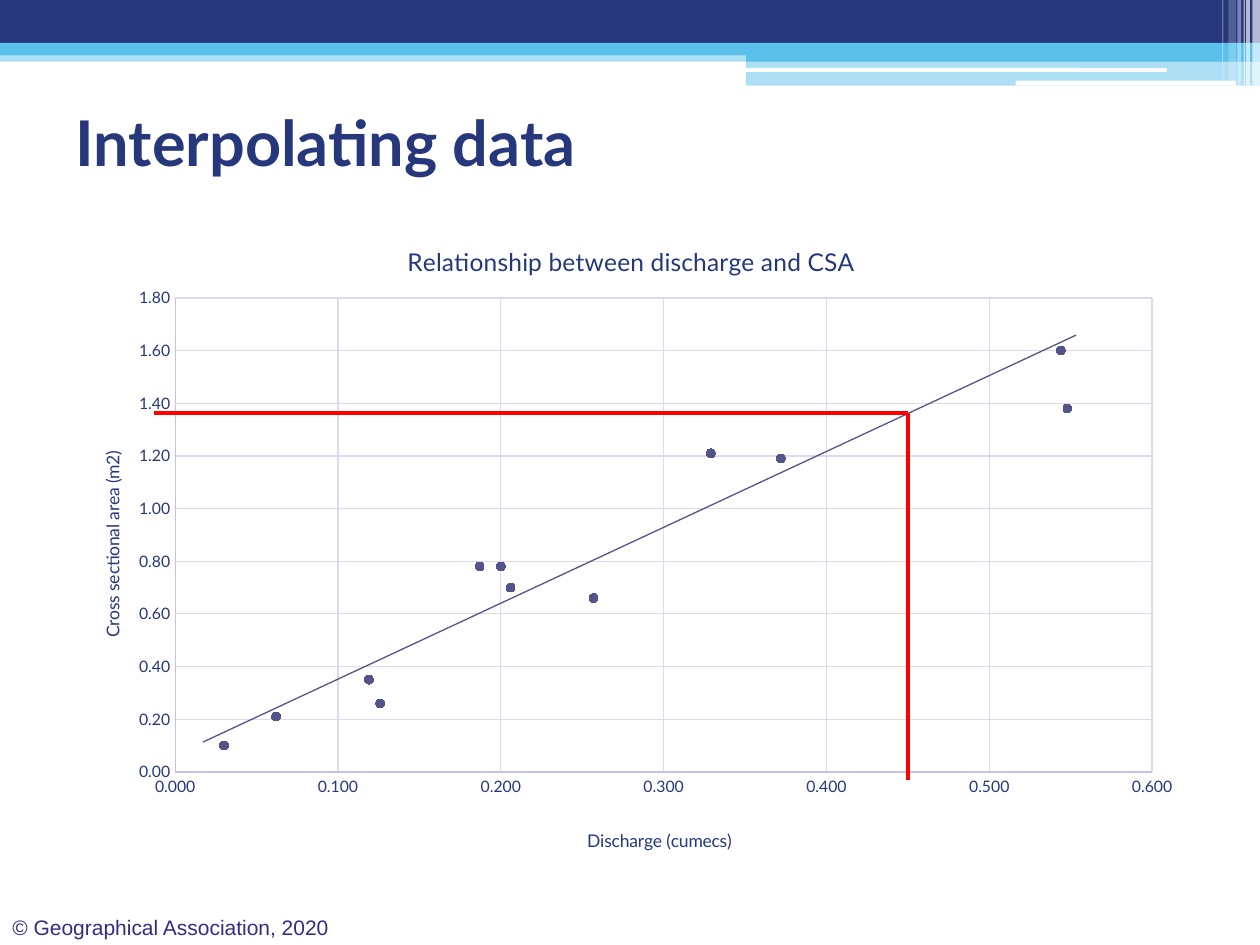
"""Builds a slide on interpolating data from a scatter chart."""
from lxml import etree
from pptx import Presentation
from pptx import util as u
from pptx.chart.data import XyChartData
from pptx.dml.color import RGBColor
from pptx.enum import chart as ch, shapes, text
from pptx.oxml import parse_xml
from pptx.oxml.ns import nsdecls, qn

NAVY, SKY, WHITE = "26377C", "5CC1EA", "FFFFFF"
PURPLE, SLATE, RED = "352B84", "53548A", "FF0000"
AXIS, GRID = "C5C0EA", "DCD9F3"

BANDS = [
    (0, 0.4, 10, 0.09, SKY, 50),
    (0, 0, 10, 0.34, NAVY, 100),
    (0, 0.34, 10, 0.1, SKY, 100),
    (5.92, 0.39, 4.08, 0.1, SKY, 100),
    (5.92, 0.48, 4.08, 0.2, SKY, 50),
]
HIGHLIGHTS = [(5.91, 0.54, 3.35, 0.03), (8.06, 0.64, 1.75, 0.04)]
STRIPES = [
    (9.94, 0.06, 0.68, 65),
    (9.89, 0.03, 0.68, 65),
    (9.87, 0.01, 0.68, 60),
    (9.82, 0.03, 0.68, 40),
    (9.75, 0.06, 0.64, 20),
    (9.7, 0.01, 0.64, 30),
]
DISCHARGE_AREA = [
    (0.030, 0.10), (0.126, 0.26), (0.187, 0.78), (0.062, 0.21),
    (0.372, 1.19), (0.206, 0.70), (0.257, 0.66), (0.119, 0.35),
    (0.200, 0.78), (0.548, 1.38), (0.544, 1.60), (0.329, 1.21),
]


def rgb(value):
    """Return the colour for a hex string."""
    return RGBColor.from_string(value)


def style_font(font, name, size, color, bold=False):
    """Set typeface, size, colour and weight."""
    font.name, font.size, font.bold = name, u.Pt(size), bold
    font.color.rgb = rgb(color)


def style_line(line, color, width):
    """Set the colour and width of a line."""
    line.color.rgb = rgb(color)
    line.width = u.Pt(width)


def add_bar(slide, left, top, width, height, color, opacity=100,
            kind=shapes.MSO_SHAPE.RECTANGLE):
    """Add a borderless bar with an opacity in percent."""
    bar = slide.shapes.add_shape(kind, *map(u.Inches, (left, top, width, height)))
    bar.shadow.inherit = False
    bar.line.fill.background()
    bar.fill.solid()
    bar.fill.fore_color.rgb = rgb(color)
    if opacity < 100:
        fill = bar.fill._xPr.find(qn("a:solidFill"))[0]
        etree.SubElement(fill, qn("a:alpha"), val=str(opacity * 1000))


def add_banner(slide):
    """Add the header bands, highlights and fading stripes."""
    for band in BANDS:
        add_bar(slide, *band)
    for highlight in HIGHLIGHTS:
        add_bar(slide, *highlight, WHITE, kind=shapes.MSO_SHAPE.ROUNDED_RECTANGLE)
    for left, width, height, opacity in STRIPES:
        add_bar(slide, left, 0, width, height, WHITE, opacity)


def add_line(slide, start, end, color, width):
    """Add a straight line between two points."""
    line = slide.shapes.add_connector(
        shapes.MSO_CONNECTOR.STRAIGHT, *map(u.Inches, (*start, *end)))
    style_line(line.line, color, width)
    etree.SubElement(line._element.spPr, qn("a:effectLst"))


def place(element, index, **fractions):
    """Give a chart part a manual position in fractions of the chart."""
    for old in element.findall(qn("c:layout")):
        element.remove(old)
    target = '<c:layoutTarget val="inner"/>' if "w" in fractions else ""
    modes = '<c:xMode val="edge"/><c:yMode val="edge"/>'
    values = "".join(f'<c:{key} val="{value}"/>' for key, value in fractions.items())
    element.insert(index, parse_xml(
        f'<c:layout {nsdecls("c")}><c:manualLayout>{target}{modes}{values}'
        "</c:manualLayout></c:layout>"))


def set_title(owner, wording, size, x, y):
    """Title a chart or an axis at a given position."""
    title = (owner.chart_title if hasattr(owner, "chart_title")
             else owner.axis_title)
    title.text_frame.text = wording
    style_font(title.text_frame.paragraphs[0].font, "Lato", size, NAVY)
    place(title._element, 1, x=x, y=y)
    return title


def style_axis(axis, maximum, step, number_format):
    """Set the scale, labels, line and gridlines of an axis."""
    axis.minimum_scale, axis.maximum_scale, axis.major_unit = 0, maximum, step
    axis.major_tick_mark = axis.minor_tick_mark = ch.XL_TICK_MARK.NONE
    axis.has_major_gridlines = True
    style_line(axis.major_gridlines.format.line, GRID, 0.75)
    style_line(axis.format.line, AXIS, 0.75)
    style_font(axis.tick_labels.font, "Lato", 9, NAVY)
    axis.tick_labels.number_format = number_format
    axis.tick_labels.number_format_is_linked = False


def add_scatter(slide):
    """Add the chart of cross sectional area against discharge."""
    data = XyChartData()
    points = data.add_series("Series 1")
    for discharge, area in DISCHARGE_AREA:
        points.add_data_point(discharge, area)
    chart = slide.shapes.add_chart(
        ch.XL_CHART_TYPE.XY_SCATTER,
        *map(u.Inches, (0.5, 1.69, 8.99, 5.17)), data).chart
    style_font(chart.font, "Arial", 10, PURPLE)
    chart.has_legend = False
    chart.plots[0].vary_by_categories = False

    series = chart.plots[0].series[0]
    series.smooth = False
    series.format.line.fill.background()
    series.marker.style, series.marker.size = ch.XL_MARKER_STYLE.CIRCLE, 5
    series.marker.format.fill.solid()
    series.marker.format.fill.fore_color.rgb = rgb(SLATE)
    style_line(series.marker.format.line, SLATE, 0.75)

    style_axis(chart.category_axis, 0.6, 0.1, "0.000")
    style_axis(chart.value_axis, 1.8, 0.2, "0.00")
    set_title(chart, "Relationship between discharge and CSA", 14, 0.3, 0.04)
    set_title(chart.category_axis, "Discharge (cumecs)", 10, 0.46, 0.94)
    area_title = set_title(
        chart.value_axis, "Cross sectional area (m2)", 10, 0.03, 0.36)
    turned = area_title.text_frame._txBody.bodyPr
    turned.set("rot", "-5400000")
    turned.set("vert", "horz")
    plot_area = chart._chartSpace.chart.plotArea
    place(plot_area, 0, x=0.099, y=0.1305, w=0.8625, h=0.7277)


def add_heading(slide):
    """Fill the title placeholder."""
    heading = slide.shapes.title
    heading.left, heading.top, heading.width, heading.height = map(
        u.Inches, (0.5, 0.54, 9, 1.17))
    heading.text_frame.text = "Interpolating data"
    heading.text_frame.vertical_anchor = text.MSO_ANCHOR.MIDDLE
    line = heading.text_frame.paragraphs[0]
    line.alignment = text.PP_ALIGN.LEFT
    style_font(line.font, "Lato", 36, NAVY, bold=True)


def add_copyright(slide):
    """Add the copyright line at the bottom left."""
    notice = slide.shapes.add_textbox(*map(u.Inches, (0, 7.21, 2.87, 0.3)))
    notice.text_frame.word_wrap = True
    notice.text_frame.text = "© Geographical Association, 2020"
    style_font(notice.text_frame.paragraphs[0].font, "Arial", 12, PURPLE)


def main():
    """Build and save the slide."""
    deck = Presentation()
    deck.slide_width, deck.slide_height = u.Inches(10), u.Inches(7.5)
    slide = deck.slides.add_slide(deck.slide_layouts[5])
    add_banner(slide)
    add_copyright(slide)
    add_heading(slide)
    add_scatter(slide)
    reading = (7.21, 3.28)
    add_line(slide, (1.61, 5.89), (8.54, 2.66), SLATE, 0.75)
    add_line(slide, (7.21, 6.19), reading, RED, 2.25)
    add_line(slide, (1.22, 3.28), reading, RED, 2.25)
    deck.save("out.pptx")


if __name__ == "__main__":
    main()
